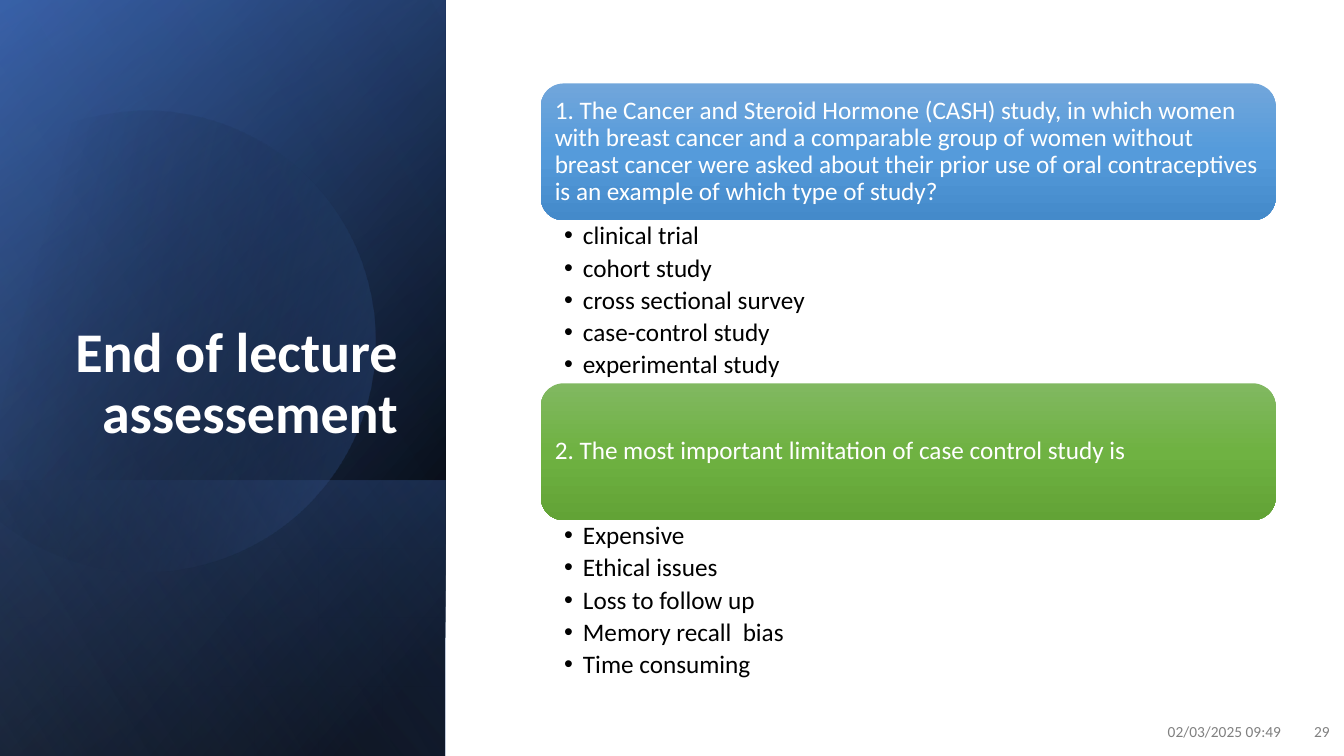
from math import cos, radians, sin

from lxml.etree import SubElement
from pptx import Presentation
from pptx.dml.color import RGBColor
from pptx.enum.shapes import MSO_SHAPE
from pptx.enum.text import MSO_ANCHOR, PP_ALIGN
from pptx.oxml import parse_xml
from pptx.oxml.ns import nsdecls, qn
from pptx.util import Pt

TITLE = "End of lecture assessement"
DATE = "02/03/2025 09:49"
PAGE = "29"
QUESTIONS = [
    ("1. The Cancer and Steroid Hormone (CASH) study, in which women with breast cancer "
     "and a comparable group of women without breast cancer were asked about their prior "
     "use of oral contraceptives is an example of which type of study?",
     ["clinical trial", "cohort study", "cross sectional survey",
      "case-control study", "experimental study"],
     ["sky", "blue", "deep blue"]),
    ("2. The most important limitation of case control study is",
     ["Expensive", "Ethical issues", "Loss to follow up",
      "Memory recall  bias", "Time consuming"],
     ["sage", "green", "deep green"]),
]
COLORS = {
    "white": "FFFFFF", "black": "000000", "gray": "808080",
    "navy": "2F5597", "accent": "4472C4", "pale": "8FAADC",
    "sky": "71A6DB", "blue": "559BDB", "deep blue": "448ACA",
    "sage": "81B861", "green": "6FB242", "deep green": "62A336",
}

SLIDE_W, SLIDE_H = 960, 540
PANEL_W = 318.2
BAND_H = 197
LAYERS_BELOW = [
    (SLIDE_H, 50, [(8, "black", 100), (100, "navy", 100)]),
    (SLIDE_H, 30, [(0, "black", 0), (99, "accent", 46)]),
    (BAND_H, 130, [(2, "accent", 29), (100, "black", 30)]),
]
LAYER_ABOVE = (SLIDE_H, 120, [(0, "black", 0), (99, "pale", 11)])
GLOW_STOPS = [(29, "black", 0), (100, "accent", 43)]
GLOW_X, GLOW_Y, GLOW_W, GLOW_H = -39.6, 76.3, 307.4, 329
GLOW_TILT = 16.1
GLOW_START = (107.3, 79.2)
GLOW_SEGMENTS = [
    [(177.1, 80.6), (241.2, 127.4), (261.4, 198)],
    [(286.6, 285.8), (236.2, 376.6), (149, 401.8)],
    [(94.3, 417.6), (38.2, 403.9), (-2.2, 370.1)],
    [(-10.8, 362.2)],
    [(-10.8, 126)],
    [(0, 115.9)],
    [(16.6, 102.2), (36, 92.2), (57.6, 85.7)],
    [(74.2, 81.4), (90.7, 79.2), GLOW_START],
]
LIST_X, LIST_Y, LIST_W = 386.3, 59.6, 524.9
CARD_H, ANSWERS_H = 97.7, 116.5
FOOTER_Y, FOOTER_H = 508.3, 28.8


def paint(shape, stops, angle):
    shape.shadow.inherit = False
    shape.line.fill.background()
    shape.fill.solid()
    solid = shape._element.spPr.find(qn("a:solidFill"))
    marks = "".join(
        f'<a:gs pos="{position * 1000}"><a:srgbClr val="{COLORS[color]}">'
        f'<a:alpha val="{opacity * 1000}"/></a:srgbClr></a:gs>'
        for position, color, opacity in stops)
    gradient = parse_xml(
        f'<a:gradFill {nsdecls("a")} rotWithShape="1"><a:gsLst>{marks}</a:gsLst>'
        f'<a:lin ang="{angle * 60000}" scaled="0"/></a:gradFill>')
    solid.getparent().replace(solid, gradient)


def write(shape, lines, size=18, color="black", bold=False, align=PP_ALIGN.LEFT,
          anchor=MSO_ANCHOR.MIDDLE, insets=(7.2, 3.6, 7.2, 3.6), spacing=0.9,
          after=0, bullet_indent=0):
    frame = shape.text_frame
    frame.word_wrap = True
    frame.vertical_anchor = anchor
    (frame.margin_left, frame.margin_top,
     frame.margin_right, frame.margin_bottom) = map(Pt, insets)
    for number, line in enumerate(lines):
        paragraph = frame.add_paragraph() if number else frame.paragraphs[0]
        paragraph.text = line
        paragraph.alignment = align
        paragraph.line_spacing = spacing
        paragraph.space_after = Pt(after)
        if bullet_indent:
            properties = paragraph._p.get_or_add_pPr()
            properties.set("marL", str(Pt(bullet_indent)))
            properties.set("indent", str(-Pt(bullet_indent)))
            SubElement(properties, qn("a:buFont")).set("typeface", "Arial")
            SubElement(properties, qn("a:buChar")).set("char", "•")
        font = paragraph.font
        font.name, font.size, font.bold = "Calibri", Pt(size), bold
        font.color.rgb = RGBColor.from_string(COLORS[color])


def add_text(shapes, x, y, width, height, lines, **style):
    write(shapes.add_textbox(Pt(x), Pt(y), Pt(width), Pt(height)), lines, **style)


def add_layer(shapes, height, angle, stops):
    center_x, center_y = PANEL_W / 2, SLIDE_H - height / 2
    layer = shapes.add_shape(
        MSO_SHAPE.RECTANGLE, Pt(center_x - height / 2), Pt(center_y - PANEL_W / 2),
        Pt(height), Pt(PANEL_W))
    layer.rotation = 90
    layer._element.spPr.find(qn("a:xfrm")).set("flipH", "1")
    paint(layer, stops, angle)


def untilt(point):
    x, y = point[0] - GLOW_X - GLOW_W / 2, point[1] - GLOW_Y - GLOW_H / 2
    turn = radians(GLOW_TILT)
    return (GLOW_W / 2 + x * cos(turn) - y * sin(turn),
            GLOW_H / 2 + x * sin(turn) + y * cos(turn))


def add_glow(shapes):
    outline = shapes.build_freeform(*untilt(GLOW_START), scale=Pt(1))
    outline.add_line_segments([untilt(points[-1]) for points in GLOW_SEGMENTS], close=True)
    glow = outline.convert_to_shape()
    glow.left, glow.top, glow.width, glow.height = map(Pt, (GLOW_X, GLOW_Y, GLOW_W, GLOW_H))
    glow.rotation = -GLOW_TILT

    route = next(glow._element.iter(qn("a:path")))
    for step in list(route):
        route.remove(step)
    route.set("w", str(Pt(GLOW_W)))
    route.set("h", str(Pt(GLOW_H)))
    for order, points in enumerate([[GLOW_START], *GLOW_SEGMENTS]):
        kind = "a:cubicBezTo" if len(points) == 3 else "a:lnTo" if order else "a:moveTo"
        step = SubElement(route, qn(kind))
        for point in points:
            x, y = untilt(point)
            SubElement(step, qn("a:pt"), x=str(Pt(x)), y=str(Pt(y)))
    SubElement(route, qn("a:close"))
    paint(glow, GLOW_STOPS, 30)


def main():
    deck = Presentation()
    deck.slide_width, deck.slide_height = Pt(SLIDE_W), Pt(SLIDE_H)
    shapes = deck.slides.add_slide(deck.slide_layouts[6]).shapes

    for layer in LAYERS_BELOW:
        add_layer(shapes, *layer)
    add_glow(shapes)
    add_layer(shapes, *LAYER_ABOVE)

    add_text(shapes, 45.7, 132.9, 245.5, 188.6, [TITLE], size=40, color="white",
             bold=True, align=PP_ALIGN.RIGHT, anchor=MSO_ANCHOR.BOTTOM)
    for x, width, label in [(706.3, 216, DATE), (921.6, 35.3, PAGE)]:
        add_text(shapes, x, FOOTER_Y, width, FOOTER_H, [label], size=11, color="gray",
                 align=PP_ALIGN.RIGHT, spacing=1, after=6)

    for number, (question, answers, shades) in enumerate(QUESTIONS):
        y = LIST_Y + number * (CARD_H + ANSWERS_H)
        card = shapes.add_shape(MSO_SHAPE.ROUNDED_RECTANGLE,
                                Pt(LIST_X), Pt(y), Pt(LIST_W), Pt(CARD_H))
        paint(card, [(step * 50, shade, 100) for step, shade in enumerate(shades)], 90)
        write(card, [question], color="white", insets=(5.2, 5, 5.2, 5))
        add_text(shapes, LIST_X, y + CARD_H, LIST_W, ANSWERS_H, answers,
                 anchor=MSO_ANCHOR.TOP, insets=(16.6, 2, 10, 2), after=3.6,
                 bullet_indent=13.5)

    deck.save("out.pptx")


if __name__ == "__main__":
    main()
